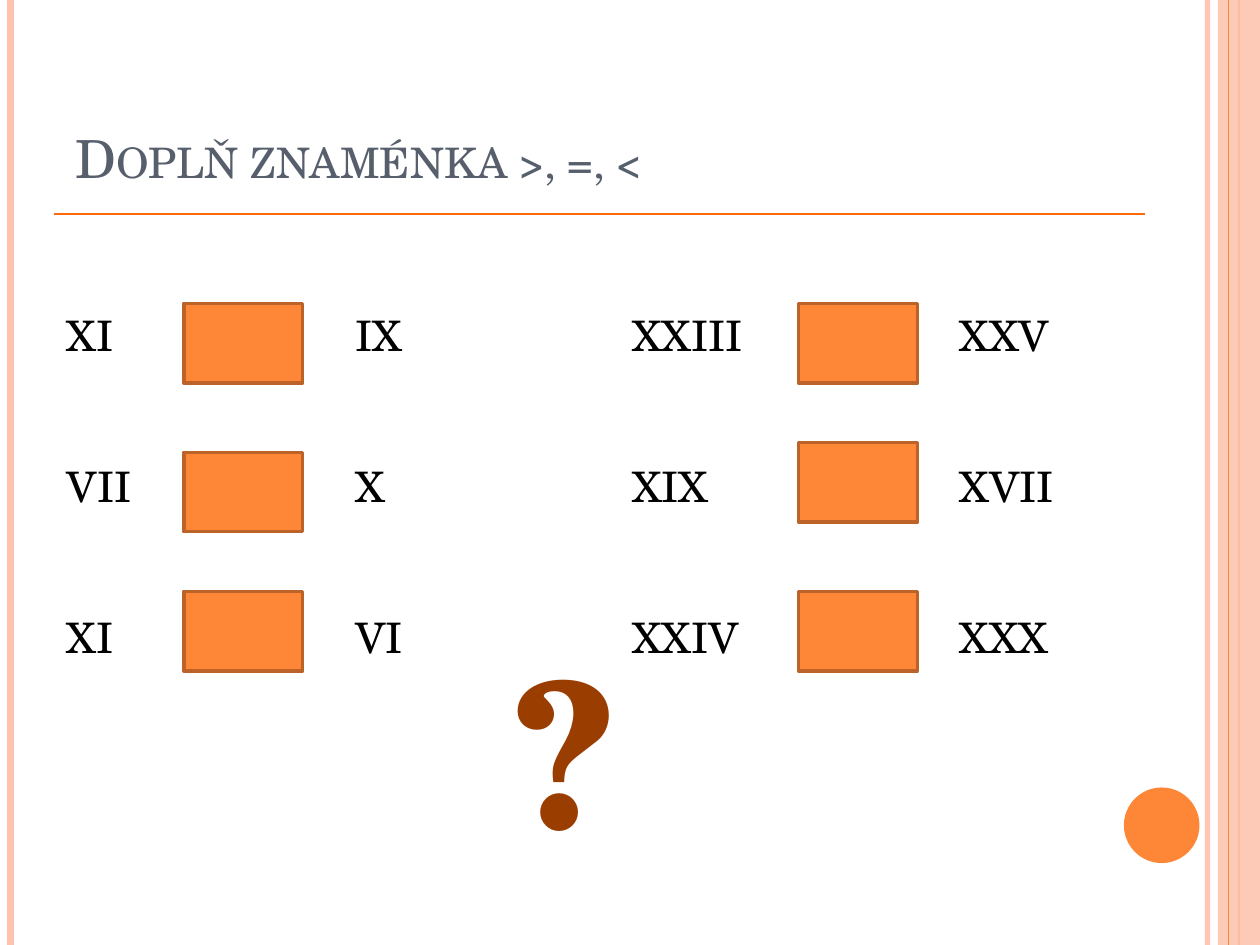
from dataclasses import dataclass

import lxml.etree
import pptx
import pptx.dml.color
import pptx.enum.shapes
import pptx.enum.text
import pptx.oxml.ns
import pptx.util

Pt = pptx.util.Pt
RGB = pptx.dml.color.RGBColor.from_string
SHAPES = pptx.enum.shapes.MSO_SHAPE
qn = pptx.oxml.ns.qn


@dataclass(frozen=True)
class Theme:
    """Colours, font and type sizes of the slide."""
    font: str = "TeX Gyre Schola"
    orange: str = "FE8637"
    pink: str = "FEC3AE"
    rule: str = "FF6B0A"
    outline: str = "BC6329"
    title: str = "575F6D"
    text: str = "000000"
    question: str = "9A3D01"
    title_size: float = 30
    body_size: float = 24
    question_size: float = 115


THEME = Theme()


def set_alpha(fill, percent):
    """Make a solid fill element partly transparent."""
    color = fill.find(".//" + qn("a:srgbClr"))
    lxml.etree.SubElement(color, qn("a:alpha")).set("val", str(percent * 1000))


def add_line(slide, start, end, color, width, alpha=100):
    """Draw a straight line without shadow."""
    line = slide.shapes.add_connector(
        pptx.enum.shapes.MSO_CONNECTOR.STRAIGHT, *map(Pt, (*start, *end)))
    line.line.color.rgb = RGB(color)
    line.line.width = Pt(width)
    properties = line._element.spPr
    if alpha < 100:
        set_alpha(properties.find(qn("a:ln")), alpha)
    lxml.etree.SubElement(properties, qn("a:effectLst"))


def add_shape(slide, kind, box, color, outline=None, alpha=100):
    """Draw a filled preset shape, outlined if an outline colour is given."""
    shape = slide.shapes.add_shape(kind, *map(Pt, box))
    shape.shadow.inherit = False
    shape.fill.solid()
    shape.fill.fore_color.rgb = RGB(color)
    if alpha < 100:
        set_alpha(shape._element.spPr.find(qn("a:solidFill")), alpha)
    if outline:
        shape.line.color.rgb = RGB(outline)
        shape.line.width = Pt(2)
    else:
        shape.line.fill.background()


def add_text(slide, box, lines, size, color, bold=False, gap=0):
    """Place paragraphs in a wrapping text box and return its text frame."""
    frame = slide.shapes.add_textbox(*map(Pt, box)).text_frame
    frame.word_wrap = True
    frame.text = "\n".join(lines)
    for index, paragraph in enumerate(frame.paragraphs):
        paragraph.space_before = Pt(gap if index else 0)
        font = paragraph.font
        font.name, font.size, font.bold = THEME.font, Pt(size), bold
        font.color.rgb = RGB(color)
    return frame


def add_frame(slide, box):
    """Draw the stripes and the disc along the slide edges."""
    left, top, width, height = box
    right, bottom = left + width, top + height

    def stripe(x, color, weight, alpha=100):
        add_line(slide, (x, top), (x, bottom), color, weight, alpha)

    stripe(right - 30, THEME.pink, 3, 93)
    stripe(left + 6, THEME.pink, 4.5)
    stripe(right - 12, THEME.orange, 1.5)
    add_shape(slide, SHAPES.RECTANGLE, (right - 24, top, 24, height), THEME.pink, alpha=87)
    stripe(right - 18, THEME.orange, 0.75)
    add_shape(slide, SHAPES.OVAL, (right - 77.75, bottom - 90, 43.2, 43.2), THEME.orange)


def add_title(slide, box, text):
    """Place the small-caps title and the rule below it."""
    left, top, width, height = box
    frame = add_text(slide, box, [text], THEME.title_size, THEME.title)
    frame.vertical_anchor = pptx.enum.text.MSO_ANCHOR.BOTTOM
    frame.paragraphs[0].runs[0]._r.get_or_add_rPr().set("cap", "small")
    rule_y = top + height + 10.8
    add_line(slide, (left - 5, rule_y), (left + width + 30.5, rule_y), THEME.rule, 1)


def add_comparisons(slide, box, pairs, columns, square_tops):
    """Set numeral pairs in two columns with an empty answer square between."""
    left, top, width, height = box
    first, square, second = columns
    for offset, numerals in zip((first, second), zip(*pairs)):
        add_text(slide, (left + offset, top, width - offset, height),
                 numerals, THEME.body_size, THEME.text, gap=57.5)
    for square_top in square_tops:
        add_shape(slide, SHAPES.RECTANGLE, (left + square, top + square_top, 68, 45.4),
                  THEME.orange, THEME.outline)


def main():
    """Build and save the slide."""
    presentation = pptx.Presentation()
    presentation.slide_width, presentation.slide_height = Pt(720), Pt(540)
    slide = presentation.slides.add_slide(presentation.slide_layouts[6])
    add_frame(slide, (0, 0, 720, 540))
    add_title(slide, (36, 21.6, 588, 90), "Doplň znaménka >, =, <")
    add_comparisons(slide, (31, 173.5, 250, 211),
                    [("XI", "IX"), ("VII", "X"), ("XI", "VI")],
                    (0, 74, 165), (0, 85, 164.5))
    add_comparisons(slide, (354.25, 173.5, 329, 211),
                    [("XXIII", "XXV"), ("XIX", "XVII"), ("XXIV", "XXX")],
                    (0, 102, 187), (0, 79.5, 164.5))
    add_text(slide, (286.5, 355, 85, 147), ["?"], THEME.question_size,
             THEME.question, bold=True)
    presentation.save("out.pptx")


if __name__ == "__main__":
    main()
